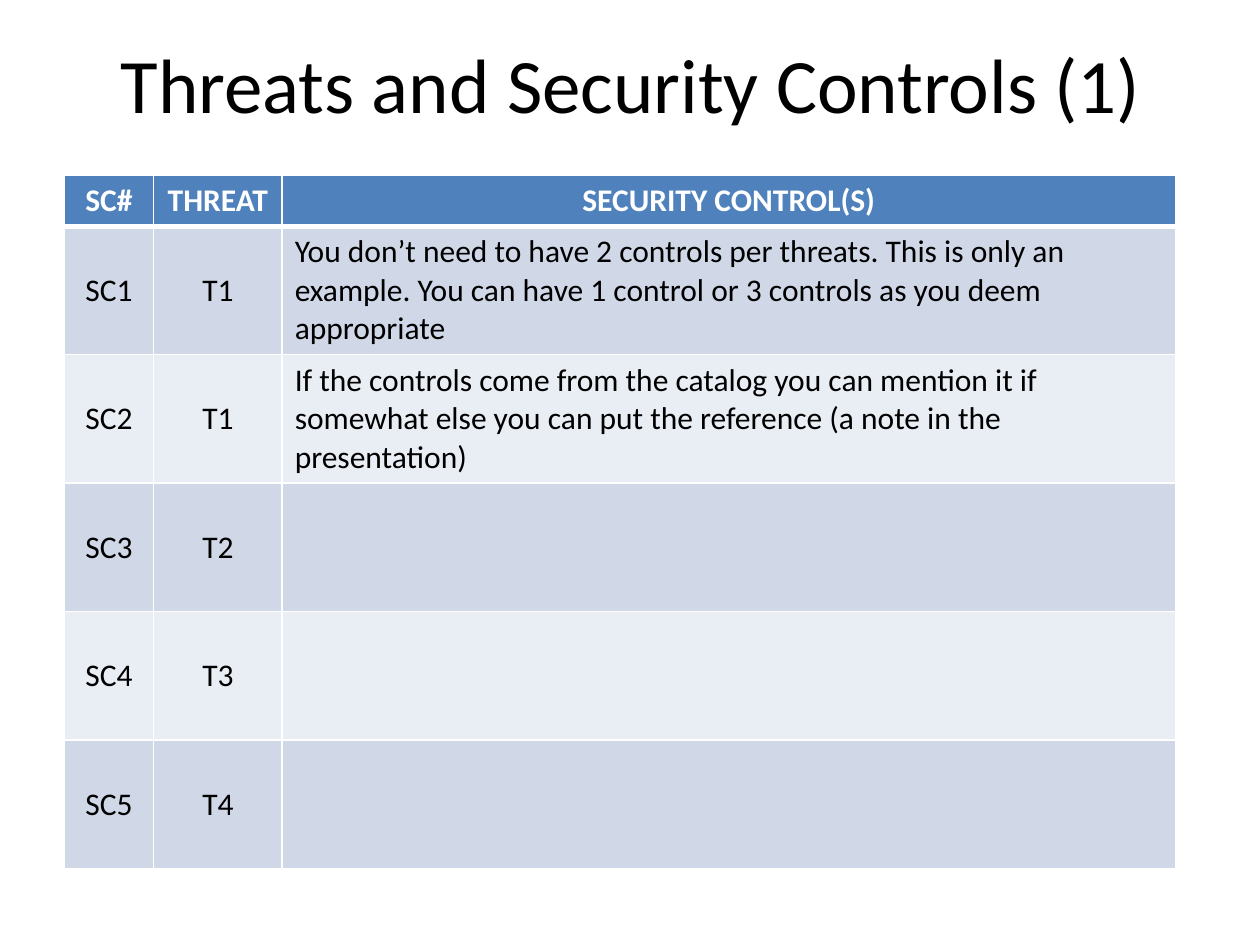
from lxml import etree
from pptx import Presentation
from pptx import util as u
from pptx.dml.color import RGBColor
from pptx.enum import text
from pptx.oxml import ns

HEADINGS = ["SC#", "THREAT", "SECURITY CONTROL(S)"]
CONTROLS = [
    ("SC1", "T1", "You don’t need to have 2 controls per threats. This is only an "
                  "example. You can have 1 control or 3 controls as you deem appropriate"),
    ("SC2", "T1", "If the controls come from the catalog you can mention it if "
                  "somewhat else you can put the reference (a note in the presentation)"),
    ("SC3", "T2", ""),
    ("SC4", "T3", ""),
    ("SC5", "T4", ""),
]
COLUMN_WIDTHS = [0.71, 1.02, 7.09]
HEADER_HEIGHT, ROW_HEIGHT = 0.39, 1.02


def color(value):
    return RGBColor.from_string(value)


class SlideBuilder:
    font = "Calibri"
    ink, paper = "000000", "FFFFFF"
    header_fill = "4F81BD"
    band_fills = ["D0D8E8", "E9EDF4"]
    centre = text.PP_ALIGN.CENTER
    left = text.PP_ALIGN.LEFT

    def __init__(self, deck):
        self.slide = deck.slides.add_slide(deck.slide_layouts[5])

    def add_text(self, frame, words, size, ink, align, bold=False):
        para = frame.paragraphs[0]
        para.alignment = align
        para.font.size = u.Pt(size)
        if words:
            span = para.add_run()
            span.text = words
            span.font.name = self.font
            span.font.size = u.Pt(size)
            span.font.bold = bold
            span.font.color.rgb = color(ink)

    def title(self, words, x, y, width, height):
        box = self.slide.shapes.title
        box.left, box.top = u.Inches(x), u.Inches(y)
        box.width, box.height = u.Inches(width), u.Inches(height)
        box.text_frame.vertical_anchor = text.MSO_ANCHOR.MIDDLE
        self.add_text(box.text_frame, words, 44, self.ink, self.centre)

    def border(self, cell, side, points):
        line = etree.SubElement(cell._tc.get_or_add_tcPr(), ns.qn(f"a:ln{side}"),
                                w=str(u.Pt(points)))
        fill = etree.SubElement(line, ns.qn("a:solidFill"))
        etree.SubElement(fill, ns.qn("a:srgbClr"), val=self.paper)

    def cell(self, cell, words, row, column):
        header = row == 0
        # The line under the header is heavier than the rest of the grid.
        weights = {"L": 1, "R": 1, "T": 3 if row == 1 else 1, "B": 3 if header else 1}
        for side, points in weights.items():
            self.border(cell, side, points)
        cell.fill.solid()
        cell.fill.fore_color.rgb = color(
            self.header_fill if header else self.band_fills[(row - 1) % 2])
        cell.vertical_anchor = text.MSO_ANCHOR.MIDDLE
        align = self.centre if header or column < 2 else self.left
        self.add_text(cell.text_frame, words, 18, self.paper if header else self.ink,
                      align, bold=header)

    def table(self, rows, x, y, widths, heights):
        table = self.slide.shapes.add_table(
            len(rows), len(widths), u.Inches(x), u.Inches(y),
            u.Inches(sum(widths)), u.Inches(sum(heights))).table
        for column, width in zip(table.columns, widths):
            column.width = u.Inches(width)
        for row, height in zip(table.rows, heights):
            row.height = u.Inches(height)
        for r, values in enumerate(rows):
            for c, words in enumerate(values):
                self.cell(table.cell(r, c), words, r, c)


def main():
    deck = Presentation()
    deck.slide_width, deck.slide_height = u.Inches(10), u.Inches(7.5)
    builder = SlideBuilder(deck)
    builder.title("Threats and Security Controls (1)", 0.51, 0.03, 9, 1.25)
    builder.table([HEADINGS, *CONTROLS], 0.51, 1.39, COLUMN_WIDTHS,
                  [HEADER_HEIGHT] + [ROW_HEIGHT] * len(CONTROLS))
    deck.save("out.pptx")


if __name__ == "__main__":
    main()
